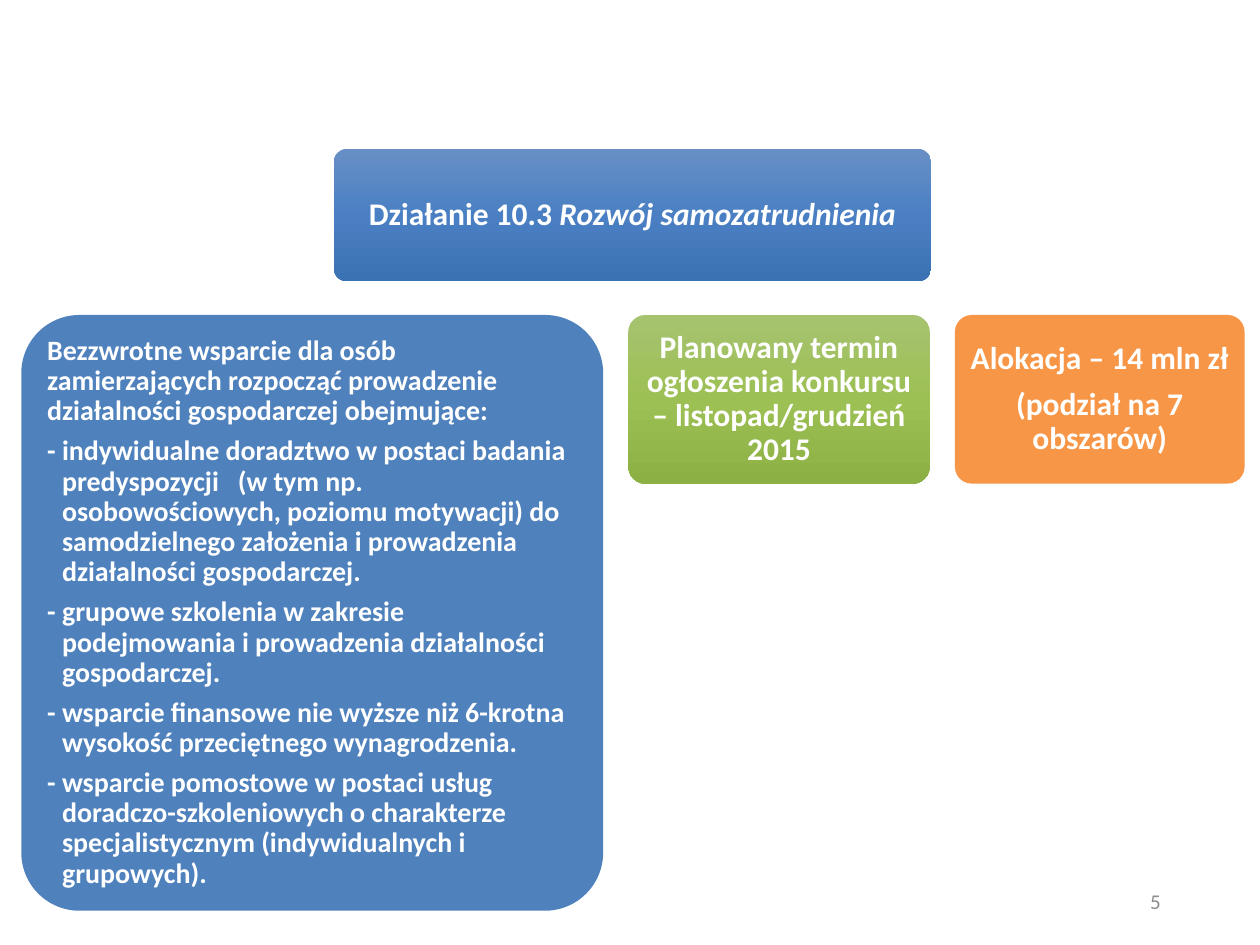
import copy
from dataclasses import dataclass

import pptx
import pptx.dml.color
import pptx.enum.shapes
import pptx.enum.text
import pptx.util

Cm = pptx.util.Cm
Pt = pptx.util.Pt
Align = pptx.enum.text.PP_ALIGN
Color = pptx.dml.color.RGBColor


@dataclass(frozen=True)
class Theme:
    font: str = "Calibri"
    text: str = "FFFFFF"
    number: str = "8C8C8C"
    heading_fill: tuple = ("688FC5", "4A80C3", "3B72B3")
    support_fill: tuple = ("4F81BD",)
    date_fill: tuple = ("A6C36F", "9DC054", "8DB045")
    budget_fill: tuple = ("F79646",)
    heading_size: int = 18
    body_size: int = 16
    number_size: int = 12


@dataclass(frozen=True)
class Panel:
    width: float
    height: float
    colors: tuple
    paragraphs: list  # each paragraph is a list of (text, italic)
    size: int = Theme.heading_size
    align: Align = Align.CENTER


THEME = Theme()
INSET = Cm(0.18)
HANGING = Cm(0.3)
ROW_LEFT, ROW_TOP, GAP = 0.43, 6.35, 0.51

HEADING = Panel(12.04, 2.67, THEME.heading_fill,
                [[("Działanie 10.3 ", False), ("Rozwój samozatrudnienia", True)]])
ROW = [
    Panel(11.73, 12.01, THEME.support_fill, [
        [("Bezzwrotne wsparcie dla osób zamierzających rozpocząć prowadzenie "
          "działalności gospodarczej obejmujące:", False)],
        [("- indywidualne doradztwo w postaci badania predyspozycji   (w tym np. "
          "osobowościowych, poziomu motywacji) do samodzielnego założenia i "
          "prowadzenia działalności gospodarczej.", False)],
        [("- grupowe szkolenia w zakresie podejmowania i prowadzenia "
          "działalności gospodarczej.", False)],
        [("- wsparcie finansowe nie wyższe niż 6-krotna wysokość przeciętnego "
          "wynagrodzenia.", False)],
        [("- wsparcie pomostowe w postaci usług doradczo-szkoleniowych o "
          "charakterze specjalistycznym (indywidualnych i grupowych).", False)],
    ], THEME.body_size, Align.LEFT),
    Panel(6.07, 3.4, THEME.date_fill,
          [[("Planowany termin ogłoszenia konkursu – listopad/grudzień 2015", False)]]),
    Panel(5.84, 3.4, THEME.budget_fill,
          [[("Alokacja – 14 mln zł", False)], [("(podział na 7 obszarów)", False)]]),
]


def add_span(para, text: str, *, size: int, color: str, bold=False, italic=False):
    span = para.add_run()
    span.text = text
    span.font.name = THEME.font
    span.font.size = Pt(size)
    span.font.bold = bold
    span.font.italic = italic
    span.font.color.rgb = Color.from_string(color)


def fill_box(box, colors: tuple):
    """Fill with one colour, or with an even top-to-bottom gradient of three."""
    if len(colors) == 1:
        box.fill.solid()
        box.fill.fore_color.rgb = Color.from_string(colors[0])
        return
    box.fill.gradient()
    box.fill.gradient_angle = 270
    stop_list = box.element.spPr.find(".//" + pptx.oxml.ns.qn("a:gsLst"))
    stop_list.append(copy.deepcopy(stop_list[0]))
    for index, (stop, color) in enumerate(zip(box.fill.gradient_stops, colors)):
        stop.position = index / (len(colors) - 1)
        stop.color.rgb = Color.from_string(color)


def add_panel(page, panel: Panel, left: float, top: float):
    box = page.shapes.add_shape(
        pptx.enum.shapes.MSO_SHAPE.ROUNDED_RECTANGLE,
        Cm(left), Cm(top), Cm(panel.width), Cm(panel.height))
    box.adjustments[0] = 0.1
    box.shadow.inherit = False
    box.line.fill.background()
    fill_box(box, panel.colors)

    frame = box.text_frame
    frame.word_wrap = True
    frame.vertical_anchor = pptx.enum.text.MSO_ANCHOR.MIDDLE
    frame.margin_left = frame.margin_right = INSET
    frame.margin_top = frame.margin_bottom = INSET
    for index, spans in enumerate(panel.paragraphs):
        para = frame.add_paragraph() if index else frame.paragraphs[0]
        para.alignment = panel.align
        para.line_spacing = 0.9
        para.space_after = Pt(round(panel.size * 0.35, 1))
        if spans[0][0].startswith("- "):
            properties = para._p.get_or_add_pPr()
            properties.set("marL", str(HANGING))
            properties.set("indent", str(-HANGING))
        for text, italic in spans:
            add_span(para, text, size=panel.size, color=THEME.text,
                     bold=True, italic=italic)


def add_page_number(page, number: str):
    box = page.shapes.add_textbox(Cm(17.93), Cm(17.65), Cm(5.72), Cm(1.02))
    frame = box.text_frame
    frame.word_wrap = True
    frame.vertical_anchor = pptx.enum.text.MSO_ANCHOR.MIDDLE
    para = frame.paragraphs[0]
    para.alignment = Align.RIGHT
    add_span(para, number, size=THEME.number_size, color=THEME.number)


def main():
    deck = pptx.Presentation()
    deck.slide_width, deck.slide_height = Cm(25.4), Cm(19.05)
    page = deck.slides.add_slide(deck.slide_layouts[6])

    add_page_number(page, "5")
    add_panel(page, HEADING, 6.73, 3)
    left = ROW_LEFT
    for panel in ROW:
        add_panel(page, panel, left, ROW_TOP)
        left += panel.width + GAP
    deck.save("out.pptx")


if __name__ == "__main__":
    main()
